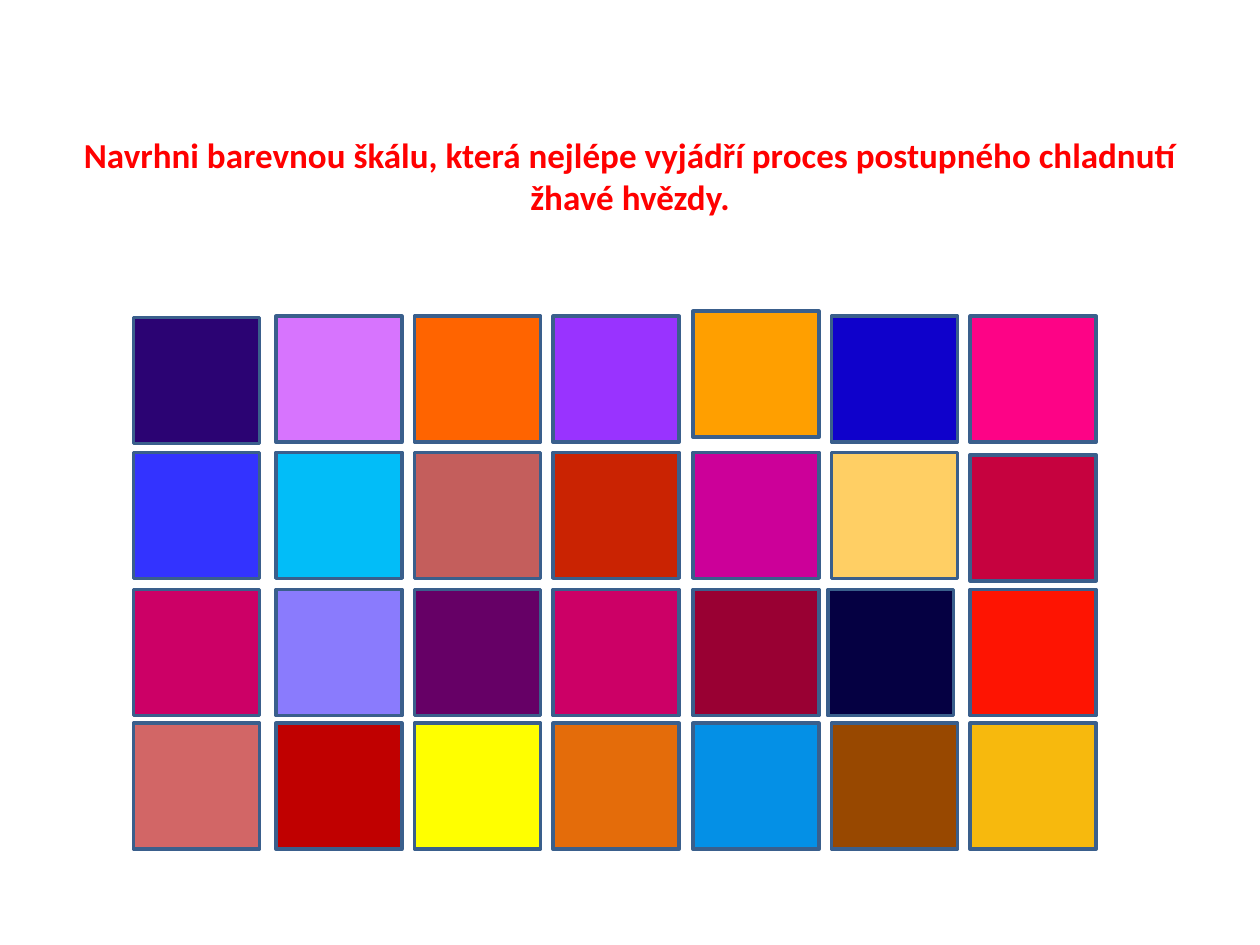
"""Build a slide with a grid of colour swatches for a cooling star."""
import pptx
import pptx.dml.color
import pptx.enum.shapes
import pptx.enum.text
import pptx.util

Inches = pptx.util.Inches
RGB = pptx.dml.color.RGBColor.from_string

COLORS = {"title": "FF0000", "outline": "3A5F8C"}
SWATCHES = {
    2.51: ["2B0373", "D774FE", "FF6400", "9933FF", "FF9F00", "0F01CB", "FD0386"],
    3.59: ["3333FF", "02BDF8", "C45E5C", "CA2302", "CC0099", "FFCF64", "C6023F"],
    4.68: ["CC0066", "8A7BFD", "660066", "CC0066", "990033", "050042", "FE1402"],
    5.74: ["D26666", "C00000", "FFFF00", "E46C0A", "0490E6", "984800", "F7B90D"],
}
LEFTS = [1.06, 2.19, 3.29, 4.39, 5.5, 6.6, 7.7]
NUDGES = {"2B0373": (0, 0.01), "FF9F00": (0, -0.04),
          "C6023F": (0, 0.02), "050042": (-0.03, 0)}

prs = pptx.Presentation()
prs.slide_width = Inches(10)
prs.slide_height = Inches(7.5)
s = prs.slides.add_slide(prs.slide_layouts[6])

tb = s.shapes.add_textbox(Inches(0.5), Inches(0.77), Inches(9), Inches(1.25))
tf = tb.text_frame
tf.word_wrap = True
tf.vertical_anchor = pptx.enum.text.MSO_ANCHOR.MIDDLE
p = tf.paragraphs[0]
p.alignment = pptx.enum.text.PP_ALIGN.CENTER
r = p.add_run()
r.text = "Navrhni barevnou škálu, která nejlépe vyjádří proces postupného chladnutí žhavé hvězdy."
r.font.name = "Calibri"
r.font.size = pptx.util.Pt(20)
r.font.bold = True
r.font.color.rgb = RGB(COLORS["title"])

for top, fills in SWATCHES.items():
    for left, fill in zip(LEFTS, fills):
        dx, dy = NUDGES.get(fill, (0, 0))
        sp = s.shapes.add_shape(
            pptx.enum.shapes.MSO_SHAPE.RECTANGLE,
            Inches(left + dx), Inches(top + dy), Inches(1), Inches(1))
        sp.shadow.inherit = False
        sp.fill.solid()
        sp.fill.fore_color.rgb = RGB(fill)
        sp.line.color.rgb = RGB(COLORS["outline"])
        sp.line.width = pptx.util.Pt(2)

prs.save("out.pptx")
